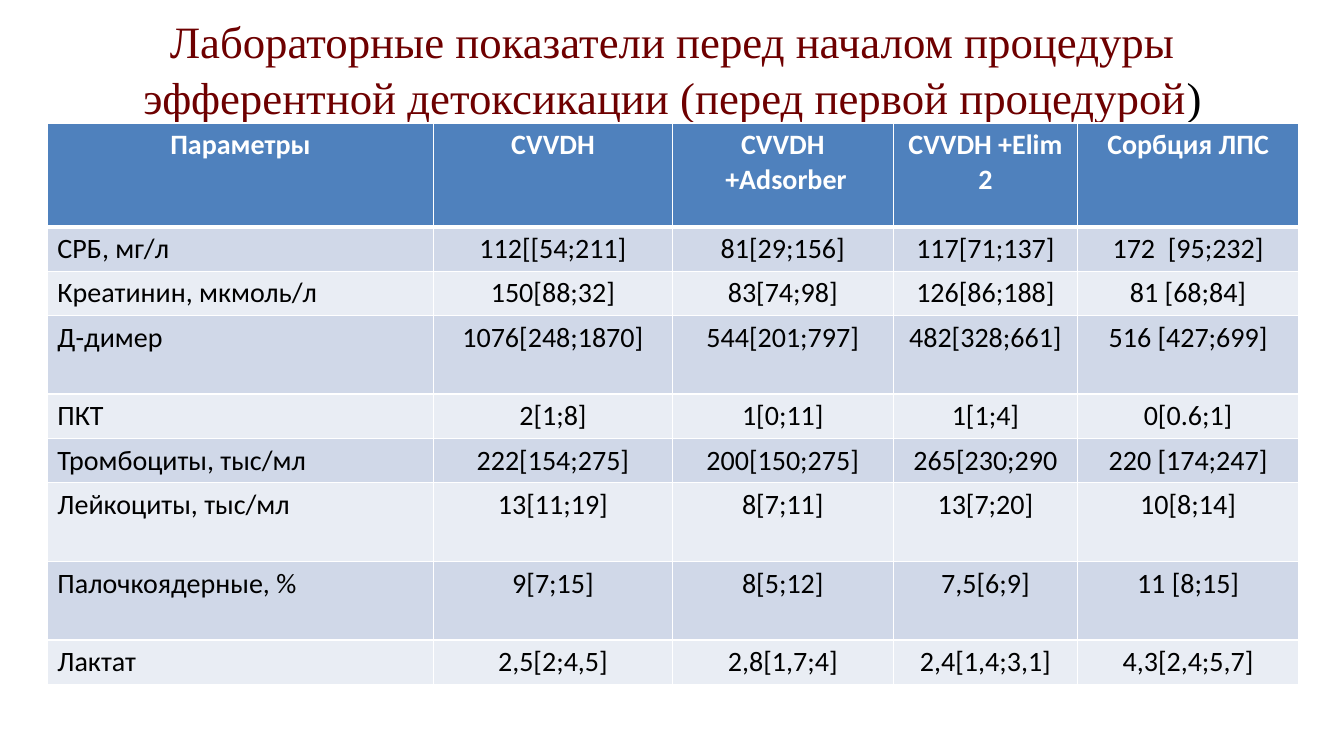
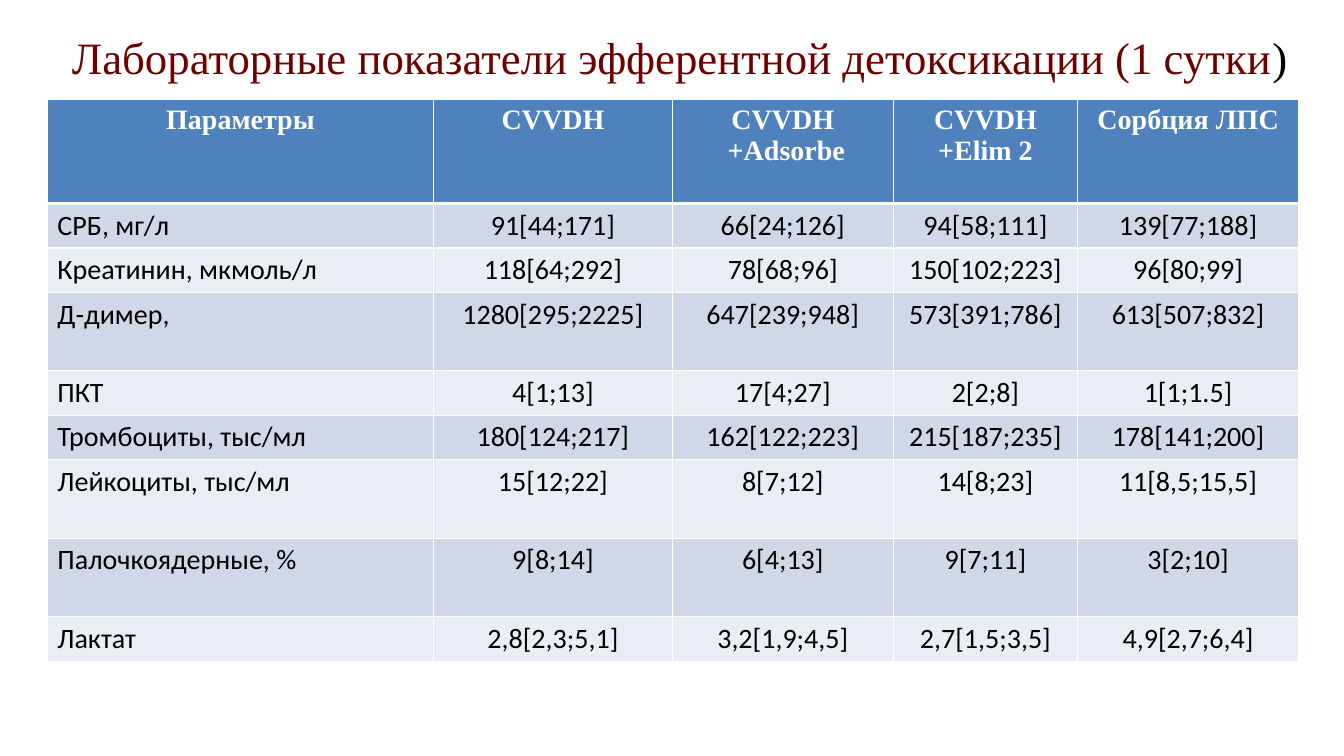
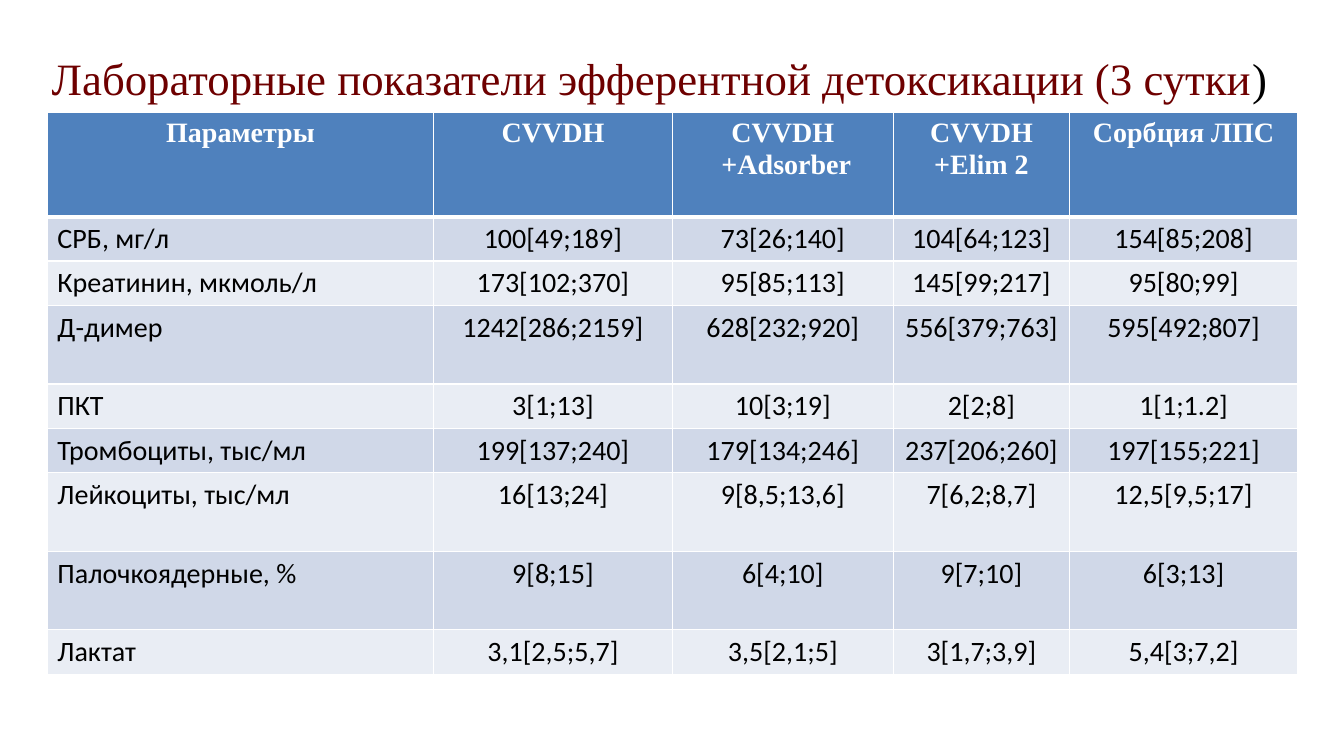
from dataclasses import dataclass

from lxml import etree
from pptx import Presentation
from pptx import util as u
from pptx.dml.color import RGBColor
from pptx.enum import text
from pptx.oxml.ns import qn


@dataclass(frozen=True)
class Theme:
    """Colours, fonts and type sizes of the deck."""
    title_color: str = "6E0000"
    ink: str = "000000"
    white: str = "FFFFFF"
    header_fill: str = "4F81BD"
    bands: tuple = ("D0D8E8", "E9EDF4")
    serif: str = "Times New Roman"
    sans: str = "Calibri"
    title_size: int = 32
    cell_size: int = 20
    grid_line: int = 1
    header_line: int = 3


PARAMETERS = ("СРБ, мг/л", "Креатинин, мкмоль/л", "Д-димер", "ПКТ",
              "Тромбоциты, тыс/мл", "Лейкоциты, тыс/мл",
              "Палочкоядерные, %", "Лактат")
TALL_ROWS = ("Д-димер", "Лейкоциты, тыс/мл", "Палочкоядерные, %")
HEADER_HEIGHT, ROW_HEIGHT, TALL_HEIGHT = 1.03, 0.44, 0.78
TABLE_LEFT = 0.47
COLUMNS = (3.83, 2.37, 2.19, 1.83, 2.19)

STAGES = (
    dict(
        title="Лабораторные показатели перед началом процедуры "
              "эфферентной детоксикации (перед первой процедурой",
        title_box=(0.67, 0.13, 12, 1.07), table_top=1.22, columns=COLUMNS,
        header_font=Theme.sans, sorbent="Adsorber", relabel={},
        values=(
            ("112[[54;211]", "81[29;156]", "117[71;137]", "172  [95;232]"),
            ("150[88;32]", "83[74;98]", "126[86;188]", "81 [68;84]"),
            ("1076[248;1870]", "544[201;797]", "482[328;661]", "516 [427;699]"),
            ("2[1;8]", "1[0;11]", "1[1;4]", "0[0.6;1]"),
            ("222[154;275]", "200[150;275]", "265[230;290", "220 [174;247]"),
            ("13[11;19]", "8[7;11]", "13[7;20]", "10[8;14]"),
            ("9[7;15]", "8[5;12]", "7,5[6;9]", "11 [8;15]"),
            ("2,5[2;4,5]", "2,8[1,7;4]", "2,4[1,4;3,1]", "4,3[2,4;5,7]"),
        )),
    dict(
        title="Лабораторные показатели эфферентной детоксикации (1 сутки",
        title_box=(0.59, -0.08, 12.3, 1.25), table_top=0.99, columns=COLUMNS,
        header_font=Theme.serif, sorbent="Adsorbe",
        relabel={"Д-димер": "Д-димер,"},
        values=(
            ("91[44;171]", "66[24;126]", "94[58;111]", "139[77;188]"),
            ("118[64;292]", "78[68;96]", "150[102;223]", "96[80;99]"),
            ("1280[295;2225]", "647[239;948]", "573[391;786]", "613[507;832]"),
            ("4[1;13]", "17[4;27]", "2[2;8]", "1[1;1.5]"),
            ("180[124;217]", "162[122;223]", "215[187;235]", "178[141;200]"),
            ("15[12;22]", "8[7;12]", "14[8;23]", "11[8,5;15,5]"),
            ("9[8;14]", "6[4;13]", "9[7;11]", "3[2;10]"),
            ("2,8[2,3;5,1]", "3,2[1,9;4,5]", "2,7[1,5;3,5]", "4,9[2,7;6,4]"),
        )),
    dict(
        title="Лабораторные показатели эфферентной детоксикации (3 сутки",
        title_box=(0.21, 0.13, 12.66, 1.25), table_top=1.12,
        columns=(3.83, 2.37, 2.19, 1.75, 2.26),
        header_font=Theme.serif, sorbent="Adsorber", relabel={},
        values=(
            ("100[49;189]", "73[26;140]", "104[64;123]", "154[85;208]"),
            ("173[102;370]", "95[85;113]", "145[99;217]", "95[80;99]"),
            ("1242[286;2159]", "628[232;920]", "556[379;763]", "595[492;807]"),
            ("3[1;13]", "10[3;19]", "2[2;8]", "1[1;1.2]"),
            ("199[137;240]", "179[134;246]", "237[206;260]", "197[155;221]"),
            ("16[13;24]", "9[8,5;13,6]", "7[6,2;8,7]", "12,5[9,5;17]"),
            ("9[8;15]", "6[4;10]", "9[7;10]", "6[3;13]"),
            ("3,1[2,5;5,7]", "3,5[2,1;5]", "3[1,7;3,9]", "5,4[3;7,2]"),
        )),
)


class Deck:
    """Builds slides in one style."""

    def __init__(self, theme):
        self.theme = theme
        self.prs = Presentation()
        self.prs.slide_width = u.Inches(13.33)
        self.prs.slide_height = u.Inches(7.5)
        self.slide = None

    def new_slide(self):
        """Starts a blank slide."""
        self.slide = self.prs.slides.add_slide(self.prs.slide_layouts[6])

    def style(self, run, font, size, color, bold=False):
        """Formats one run."""
        run.font.name = font
        run.font.size = u.Pt(size)
        run.font.bold = bold
        run.font.color.rgb = RGBColor.from_string(color)

    def title(self, wording, box):
        """Adds a centred title with a black closing bracket."""
        theme = self.theme
        heading = self.slide.shapes.add_textbox(*map(u.Inches, box)).text_frame
        heading.word_wrap = True
        heading.vertical_anchor = text.MSO_ANCHOR.MIDDLE
        line = heading.paragraphs[0]
        line.alignment = text.PP_ALIGN.CENTER
        line.line_spacing = 1.05
        for part, color in ((wording, theme.title_color), (")", theme.ink)):
            run = line.add_run()
            run.text = part
            self.style(run, theme.serif, theme.title_size, color)

    def borders(self, cell, top, bottom):
        """Draws white borders around a cell."""
        props = cell._tc.get_or_add_tcPr()
        side = self.theme.grid_line
        widths = (("lnL", side), ("lnR", side), ("lnT", top), ("lnB", bottom))
        for place, (tag, width) in enumerate(widths):
            edge = etree.Element(qn("a:" + tag), w=str(u.Pt(width)))
            fill = etree.SubElement(edge, qn("a:solidFill"))
            etree.SubElement(fill, qn("a:srgbClr"), val=self.theme.white)
            props.insert(place, edge)

    def cell(self, cell, wording, fill, font, color, bold, centred):
        """Fills and formats one table cell."""
        cell.fill.solid()
        cell.fill.fore_color.rgb = RGBColor.from_string(fill)
        cell.text_frame.text = wording
        for line in cell.text_frame.paragraphs:
            line.alignment = text.PP_ALIGN.CENTER if centred else text.PP_ALIGN.LEFT
            for run in line.runs:
                self.style(run, font, self.theme.cell_size, color, bold)

    def table(self, rows, top, columns, heights, header_font):
        """Adds a banded table with a header row."""
        theme = self.theme
        grid = self.slide.shapes.add_table(
            len(rows), len(columns), u.Inches(TABLE_LEFT), u.Inches(top),
            u.Inches(sum(columns)), u.Inches(sum(heights))).table
        for column, width in zip(grid.columns, columns):
            column.width = u.Inches(width)
        for r, (row, height) in enumerate(zip(rows, heights)):
            grid.rows[r].height = u.Inches(height)
            header = r == 0
            fill = theme.header_fill if header else theme.bands[(r - 1) % 2]
            font = header_font if header else theme.sans
            color = theme.white if header else theme.ink
            above = theme.header_line if r == 1 else theme.grid_line
            below = theme.header_line if header else theme.grid_line
            for c, wording in enumerate(row):
                cell = grid.cell(r, c)
                self.cell(cell, wording, fill, font, color, header, header or c > 0)
                self.borders(cell, above, below)


def main():
    """Builds and saves the deck."""
    deck = Deck(Theme())
    heights = [HEADER_HEIGHT] + [
        TALL_HEIGHT if name in TALL_ROWS else ROW_HEIGHT for name in PARAMETERS]
    for stage in STAGES:
        header = ("Параметры", "CVVDH", f"CVVDH\n +{stage['sorbent']}",
                  "CVVDH +Elim 2", "Сорбция ЛПС")
        body = [(stage["relabel"].get(name, name), *values)
                for name, values in zip(PARAMETERS, stage["values"])]
        deck.new_slide()
        deck.title(stage["title"], stage["title_box"])
        deck.table([header, *body], stage["table_top"], stage["columns"],
                   heights, stage["header_font"])
    deck.prs.save("out.pptx")


if __name__ == "__main__":
    main()
